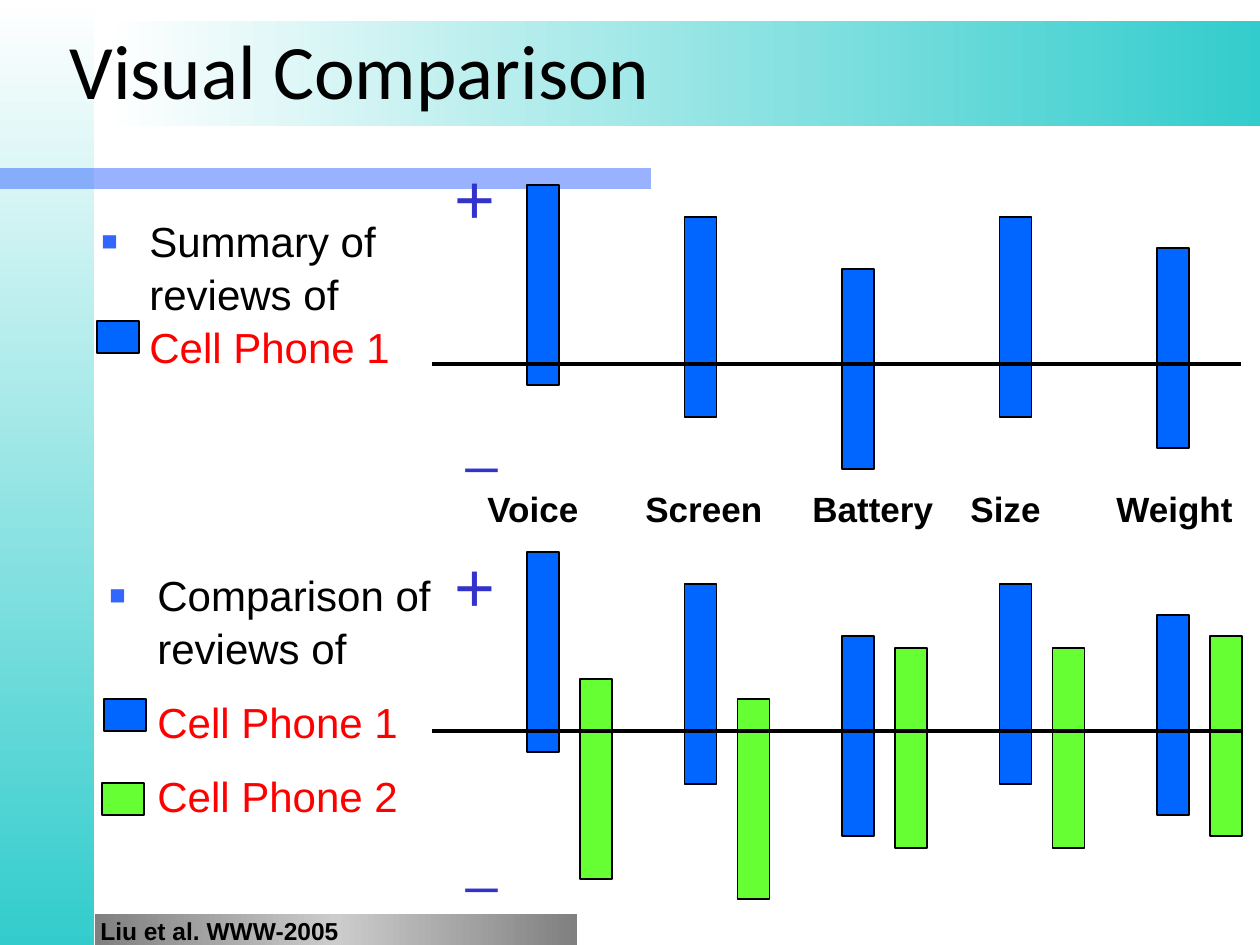
from lxml import etree
from pptx import Presentation
from pptx.dml.color import RGBColor
from pptx.enum.shapes import MSO_CONNECTOR, MSO_SHAPE
from pptx.enum.text import MSO_ANCHOR, MSO_AUTO_SIZE, PP_ALIGN
from pptx.oxml.ns import qn
from pptx.util import Emu, Pt

RECT = MSO_SHAPE.RECTANGLE
STRAIGHT = MSO_CONNECTOR.STRAIGHT
MIDDLE, TOP = MSO_ANCHOR.MIDDLE, MSO_ANCHOR.TOP
LEFT = PP_ALIGN.LEFT
NO_FIT = MSO_AUTO_SIZE.NONE

COLORS = {
    "white": "FFFFFF", "black": "000000", "teal": "33CCCC",
    "band": "3366FF", "dark_gray": "808080", "light_gray": "CCCCCC",
    "phone1": "0066FF", "phone2": "66FF33", "sign": "3333CC", "red": "FF0000",
}
PHONE1 = [179, 147, 95, 147, 116]
PHONE2 = [52, 32, 83, 83, 95]
LABELS = [("Voice", 475), ("Screen", 633), ("Battery", 800),
          ("Size", 958), ("Weight", 1104)]
BAR_W, BAR_H, STEP, PHONE2_DX = 32, 200, 157.5, 53
INDENT = 48


def px(n):
    return Emu(round(n * 914400 / 126))


def rgb(name):
    return RGBColor.from_string(COLORS[name])


def add_rect(s, x, y, w, h, fill=None, line=None):
    sp = s.shapes.add_shape(RECT, px(x), px(y), px(w), px(h))
    sp.shadow.inherit = False
    if fill:
        sp.fill.solid()
        sp.fill.fore_color.rgb = rgb(fill)
    if line:
        sp.line.color.rgb = rgb(line)
        sp.line.width = Pt(0.75)
    else:
        sp.line.fill.background()
    return sp


def add_gradient(s, x, y, w, h, stops, angle=0):
    sp = add_rect(s, x, y, w, h)
    sp.fill.gradient()
    sp.fill.gradient_angle = angle
    stop_list = sp._element.spPr.find(".//" + qn("a:gsLst"))
    for stop in list(stop_list):
        stop_list.remove(stop)
    for i, name in enumerate(stops):
        pos = 100000 * i // (len(stops) - 1)
        stop = etree.SubElement(stop_list, qn("a:gs"), pos=str(pos))
        etree.SubElement(stop, qn("a:srgbClr"), val=COLORS[name])


def add_run(p, text, size, color="black", bold=False, font="Arial"):
    r = p.add_run()
    r.text = text
    r.font.size = Pt(size)
    r.font.name = font
    r.font.bold = bold
    r.font.color.rgb = rgb(color)


def add_text_frame(s, x, y, w, h):
    tf = s.shapes.add_textbox(px(x), px(y), px(w), px(h)).text_frame
    tf.word_wrap = True
    tf.paragraphs[0].line_spacing = 1.05
    return tf


def add_label(s, x, y, w, h, text, size, color="black", bold=False):
    tf = add_text_frame(s, x, y, w, h)
    add_run(tf.paragraphs[0], text, size, color, bold)


def set_bullet(p):
    pPr = p._p.get_or_add_pPr()
    pPr.set("marL", str(px(INDENT)))
    pPr.set("indent", str(-px(INDENT)))
    color = etree.SubElement(pPr, qn("a:buClr"))
    etree.SubElement(color, qn("a:srgbClr"), val=COLORS["band"])
    etree.SubElement(pPr, qn("a:buSzPct"), val="65000")
    etree.SubElement(pPr, qn("a:buFont"), typeface="Arial")
    etree.SubElement(pPr, qn("a:buChar"), char="■")


def add_backdrop(s, w, h):
    add_gradient(s, 0, 0, 94, h, ["white", "teal"], 270)
    band = add_rect(s, 0, 168, 651, 21, "band")
    color = band._element.spPr.find(qn("a:solidFill")).find(qn("a:srgbClr"))
    etree.SubElement(color, qn("a:alpha"), val="50000")
    add_gradient(s, 95, h - 31, 482, 31, ["dark_gray", "light_gray", "dark_gray"])
    add_gradient(s, 106, 21, w - 106, 105, ["white", "teal"])


def add_title(s, x, y, w, h, text):
    title = s.shapes.title
    title.left, title.top, title.width, title.height = px(x), px(y), px(w), px(h)
    s.shapes._spTree.append(title._element)
    tf = title.text_frame
    tf.auto_size = NO_FIT
    tf.vertical_anchor = MIDDLE
    p = tf.paragraphs[0]
    p.alignment = LEFT
    add_run(p, text, 44, font="Calibri")


def add_panel(s, x, y, w, h, axis_dy, series):
    axis_y = y + axis_dy
    for dx, color, rises in series:
        for i, rise in enumerate(rises):
            add_rect(s, x + 95 + dx + i * STEP, axis_y - rise,
                     BAR_W, BAR_H, color, "black")
    axis = s.shapes.add_connector(STRAIGHT, px(x), px(axis_y), px(x + w), px(axis_y))
    axis.line.color.rgb = rgb("black")
    axis.line.width = Pt(2.25)
    etree.SubElement(axis._element.spPr, qn("a:effectLst"))
    add_label(s, x + 10, y, 95, 97, "+", 40, "sign")
    add_label(s, x + 22, y + h - 79, 95, 79, "_", 32, "sign")


def add_summary(s, x, y, w, h):
    tf = add_text_frame(s, x, y, w, h)
    p = tf.paragraphs[0]
    set_bullet(p)
    add_run(p, "Summary of reviews of", 24)
    p.add_line_break()
    add_run(p, "Cell Phone 1", 24, "red")
    add_rect(s, x + 8, y + 114, 42, 32, "phone1", "black")


def add_comparison(s, x, y, w, h):
    tf = add_text_frame(s, x, y, w, h)
    p = tf.paragraphs[0]
    set_bullet(p)
    add_run(p, "Comparison of reviews of", 24)
    for name in ("Cell Phone 1", "Cell Phone 2"):
        p = tf.add_paragraph()
        p.line_spacing = 1.05
        p.space_before = Pt(12)
        p._p.get_or_add_pPr().set("marL", str(px(INDENT)))
        add_run(p, name, 24, "red")
    add_rect(s, x + 7, y + 138, 42, 32, "phone1", "black")
    add_rect(s, x + 5, y + 222, 42, 32, "phone2", "black")


def main():
    prs = Presentation()
    prs.slide_width, prs.slide_height = px(1260), px(945)
    s = prs.slides.add_slide(prs.slide_layouts[5])
    add_backdrop(s, 1260, 945)
    add_title(s, 57, 20, 1134, 98, "Visual Comparison")
    phone1 = (0, "phone1", PHONE1)
    phone2 = (PHONE2_DX, "phone2", PHONE2)
    add_panel(s, 432, 144, 809, 331, 220, [phone1])
    add_summary(s, 89, 207, 378, 165)
    for text, x in LABELS:
        add_label(s, x, 479, 155, 63, text, 20, bold=True)
    add_panel(s, 432, 532, 809, 363, 199, [phone1, phone2])
    add_comparison(s, 97, 561, 399, 267)
    add_label(s, 88, 908, 300, 43, "Liu et al. WWW-2005", 14, bold=True)
    prs.save("out.pptx")


if __name__ == "__main__":
    main()
